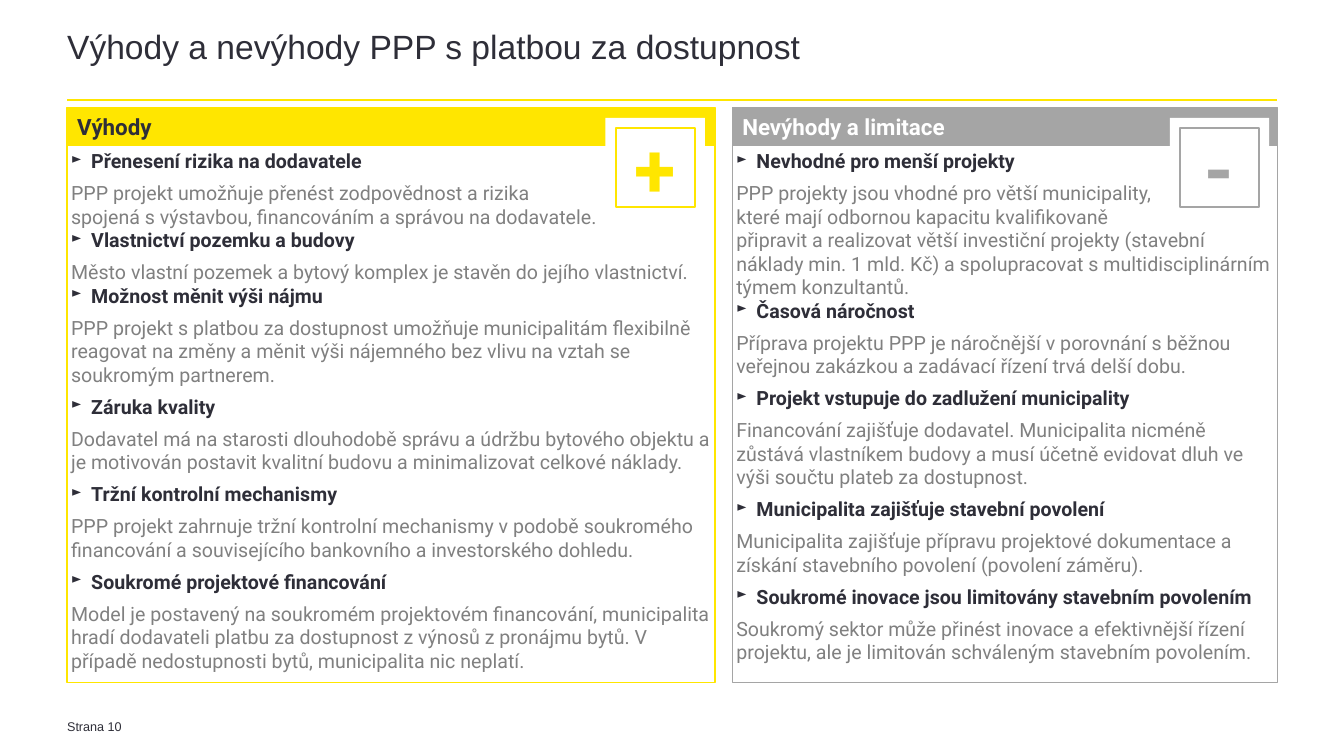
"""Build the slide comparing advantages and drawbacks of availability-payment PPP."""
import pptx
import pptx.util
import pptx.dml.color
import pptx.enum.shapes
import pptx.enum.text
import lxml.etree
from pptx.oxml.ns import qn

Pt = pptx.util.Pt
ANCHOR = pptx.enum.text.MSO_ANCHOR
ALIGN = pptx.enum.text.PP_ALIGN

COLORS = {"yellow": "FFE600", "grey": "A5A5A5", "dark": "2E2E38", "body": "808080", "white": "FFFFFF"}
TITLE = "Výhody a nevýhody PPP s platbou za dostupnost"
PAGE_LABEL = "Strana 10"

# Each point: heading, body paragraphs, space after the body
ADVANTAGES = [
    ("Přenesení rizika na dodavatele",
     ["PPP projekt umožňuje přenést zodpovědnost a rizika",
      "spojená s výstavbou, financováním a správou na dodavatele."], 0),
    ("Vlastnictví pozemku a budovy",
     ["Město vlastní pozemek a bytový komplex je stavěn do jejího vlastnictví."], 0),
    ("Možnost měnit výši nájmu",
     ["PPP projekt s platbou za dostupnost umožňuje municipalitám flexibilně reagovat na změny "
      "a měnit výši nájemného bez vlivu na vztah se soukromým partnerem."], 6),
    ("Záruka kvality",
     ["Dodavatel má na starosti dlouhodobě správu a údržbu bytového objektu a je motivován "
      "postavit kvalitní budovu a minimalizovat celkové náklady."], 6),
    ("Tržní kontrolní mechanismy",
     ["PPP projekt zahrnuje tržní kontrolní mechanismy v podobě soukromého financování "
      "a souvisejícího bankovního a investorského dohledu."], 6),
    ("Soukromé projektové financování",
     ["Model je postavený na soukromém projektovém financování, municipalita hradí dodavateli "
      "platbu za dostupnost z výnosů z pronájmu bytů. V případě nedostupnosti bytů, "
      "municipalita nic neplatí."], 6),
]
DRAWBACKS = [
    ("Nevhodné pro menší projekty",
     ["PPP projekty jsou vhodné pro větší municipality,",
      "které mají odbornou kapacitu kvalifikovaně",
      "připravit a realizovat větší investiční projekty (stavební náklady min. 1 mld. Kč) "
      "a spolupracovat s multidisciplinárním týmem konzultantů."], 0),
    ("Časová náročnost",
     ["Příprava projektu PPP je náročnější v porovnání s běžnou veřejnou zakázkou "
      "a zadávací řízení trvá delší dobu."], 6),
    ("Projekt vstupuje do zadlužení municipality",
     ["Financování zajišťuje dodavatel. Municipalita nicméně zůstává vlastníkem budovy "
      "a musí účetně evidovat dluh ve výši součtu plateb za dostupnost."], 6),
    ("Municipalita zajišťuje stavební povolení",
     ["Municipalita zajišťuje přípravu projektové dokumentace a získání stavebního povolení "
      "(povolení záměru)."], 6),
    ("Soukromé inovace jsou limitovány stavebním povolením",
     ["Soukromý sektor může přinést inovace a efektivnější řízení projektu, ale je limitován "
      "schváleným stavebním povolením."], 6),
]
PANELS = [
    {"heading": "Výhody", "sign": "+", "color": "yellow", "text": "dark",
     "left": 48, "width": 463, "badge": 432.7, "points": ADVANTAGES},
    {"heading": "Nevýhody a limitace", "sign": "-", "color": "grey", "text": "white",
     "left": 523.4, "width": 389.5, "badge": 836, "points": DRAWBACKS},
]
HEADER_TOP, HEADER_HEIGHT, BODY_HEIGHT = 77, 26.8, 383.7
BADGE_TOP, BADGE_SIZE, BADGE_MARGIN = 84.2, 71, 7.2


def rgb(name):
    """Return the named colour."""
    return pptx.dml.color.RGBColor.from_string(COLORS[name])


def set_frame(frame, insets, anchor=ANCHOR.TOP, wrap=True):
    """Set the insets, anchor and wrapping of a text frame."""
    frame.auto_size = pptx.enum.text.MSO_AUTO_SIZE.NONE
    frame.word_wrap = wrap
    frame.vertical_anchor = anchor
    frame.margin_left, frame.margin_top, frame.margin_right, frame.margin_bottom = map(Pt, insets)


def add_bullet(para):
    """Give a paragraph a hanging arrow bullet."""
    props = para._p.get_or_add_pPr()
    props.set("marL", str(Pt(14.4)))
    props.set("indent", str(-Pt(14.4)))
    color = lxml.etree.SubElement(props, qn("a:buClr"))
    lxml.etree.SubElement(color, qn("a:srgbClr"), val=COLORS["dark"])
    lxml.etree.SubElement(props, qn("a:buSzPct"), val="70000")
    lxml.etree.SubElement(props, qn("a:buChar"), char="►")


def write(frame, text, size=14, color="dark", bold=False, font="Roboto",
          align=ALIGN.LEFT, spacing=1.0, after=0, bullet=False):
    """Write text as the next paragraph of a frame."""
    para = frame.paragraphs[0] if not frame.text else frame.add_paragraph()
    if bullet:
        add_bullet(para)
    para.alignment = align
    para.line_spacing = spacing
    para.space_before = Pt(0)
    para.space_after = Pt(after)
    span = para.add_run()
    span.text = text
    span.font.size, span.font.name, span.font.bold = Pt(size), font, bold
    span.font.color.rgb = rgb(color)


def add_rect(page, left, top, width, height, fill=None, line=None, weight=1):
    """Add a rectangle with an optional fill and outline."""
    box = page.shapes.add_shape(pptx.enum.shapes.MSO_SHAPE.RECTANGLE,
                                Pt(left), Pt(top), Pt(width), Pt(height))
    box.shadow.inherit = False
    if fill:
        box.fill.solid()
        box.fill.fore_color.rgb = rgb(fill)
    else:
        box.fill.background()
    if line:
        box.line.color.rgb = rgb(line)
        box.line.width = Pt(weight)
    else:
        box.line.fill.background()
    return box


def add_panel(page, panel):
    """Add a header bar, its list of points and its sign badge."""
    left, width, color = panel["left"], panel["width"], panel["color"]
    header = add_rect(page, left, HEADER_TOP, width, HEADER_HEIGHT, color, color)
    set_frame(header.text_frame, (7.2, 3.6, 7.2, 3.6), ANCHOR.MIDDLE, False)
    write(header.text_frame, panel["heading"], size=16, color=panel["text"], bold=True)

    body = add_rect(page, left, HEADER_TOP + HEADER_HEIGHT, width, BODY_HEIGHT, line=color)
    set_frame(body.text_frame, (2.83,) * 4)
    for heading, lines, after in panel["points"]:
        write(body.text_frame, heading, bold=True, after=6, bullet=True)
        for line in lines:
            write(body.text_frame, line, color="body", after=after)

    add_rect(page, panel["badge"], BADGE_TOP, BADGE_SIZE, BADGE_SIZE, "white")
    inner = BADGE_SIZE - 2 * BADGE_MARGIN
    badge = add_rect(page, panel["badge"] + BADGE_MARGIN, BADGE_TOP + BADGE_MARGIN,
                     inner, inner, line=color, weight=1.5)
    set_frame(badge.text_frame, (0,) * 4, ANCHOR.MIDDLE)
    write(badge.text_frame, panel["sign"], size=54, color=color, bold=True, align=ALIGN.CENTER)


def main():
    """Build and save the deck."""
    deck = pptx.Presentation()
    deck.slide_width, deck.slide_height = Pt(960.5), Pt(540)
    page = deck.slides.add_slide(deck.slide_layouts[5])

    title = page.shapes.title
    title.left, title.top, title.width, title.height = Pt(48), Pt(23), Pt(864.5), Pt(47)
    set_frame(title.text_frame, (0,) * 4)
    write(title.text_frame, TITLE, size=24, font="Arial", spacing=0.85)

    rule = page.shapes.add_connector(pptx.enum.shapes.MSO_CONNECTOR.STRAIGHT,
                                     Pt(48), Pt(71.5), Pt(912.5), Pt(71.5))
    rule.line.color.rgb = rgb("yellow")
    rule.line.width = Pt(1.5)
    lxml.etree.SubElement(rule._element.spPr, qn("a:effectLst"))

    for panel in PANELS:
        add_panel(page, panel)

    label = page.shapes.add_textbox(Pt(48), Pt(512.6), Pt(72), Pt(12.5))
    set_frame(label.text_frame, (0, 2.88, 0, 0))
    write(label.text_frame, PAGE_LABEL, size=9, font="Arial", spacing=0.85, after=6)

    deck.save("out.pptx")


if __name__ == "__main__":
    main()
